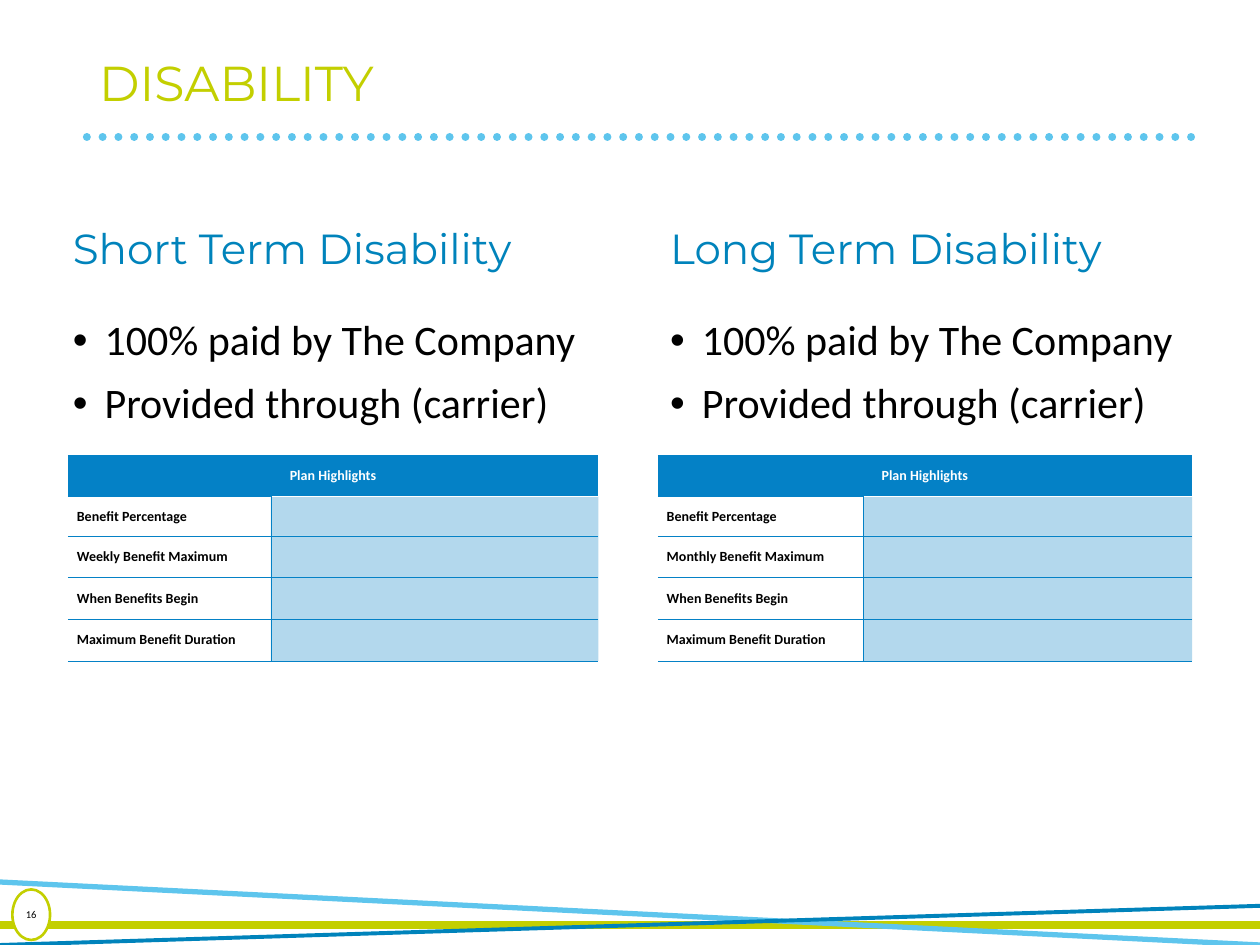
from lxml import etree
from pptx import Presentation
from pptx.dml.color import RGBColor
from pptx.enum.dml import MSO_LINE
from pptx.enum.shapes import MSO_CONNECTOR, MSO_SHAPE
from pptx.enum.text import MSO_ANCHOR, PP_ALIGN
from pptx.oxml.ns import qn
from pptx.util import Cm, Pt

STRAIGHT = MSO_CONNECTOR.STRAIGHT
OVAL = MSO_SHAPE.OVAL
ROUND_DOT = MSO_LINE.ROUND_DOT
TOP, MIDDLE = MSO_ANCHOR.TOP, MSO_ANCHOR.MIDDLE
LEFT, CENTER = PP_ALIGN.LEFT, PP_ALIGN.CENTER

WHITE = RGBColor(0xFF, 0xFF, 0xFF)
BLACK = RGBColor(0, 0, 0)
LIME = RGBColor(0xC3, 0xCF, 0x00)
SKY = RGBColor(0x5E, 0xC5, 0xED)
BLUE = RGBColor(0x00, 0x83, 0xBB)
TABLE_BLUE = RGBColor(0x04, 0x81, 0xC6)

HEADING_FONT, BODY_FONT = "Montserrat", "Calibri"
ROW_HEIGHTS = (0.84, 0.79, 0.84, 0.84, 0.84)
PLANS = (
    dict(term="Short Term", period="Weekly", left=1.22, table_left=1.37, columns=(4.09, 6.6)),
    dict(term="Long Term", period="Monthly", left=13.26, table_left=13.26, columns=(4.14, 6.63)),
)


def write(frame, text, size, font=BODY_FONT, color=BLACK, bold=False,
          align=LEFT, anchor=TOP, spacing=None, before=0, bullet=False):
    frame.word_wrap = True
    frame.vertical_anchor = anchor
    for index, line in enumerate(text.split("\n")):
        paragraph = frame.add_paragraph() if index else frame.paragraphs[0]
        paragraph.alignment = align
        if spacing:
            paragraph.line_spacing = spacing
        if index:
            paragraph.space_before = Pt(before)
        if bullet:
            properties = paragraph._p.get_or_add_pPr()
            properties.set("marL", str(Cm(0.64)))
            properties.set("indent", str(-Cm(0.64)))
            etree.SubElement(properties, qn("a:buFont"), typeface="Arial")
            etree.SubElement(properties, qn("a:buChar"), char="•")
        if not line:
            etree.SubElement(paragraph._p, qn("a:endParaRPr"), sz=str(size * 100))
            continue
        run = paragraph.add_run()
        run.text = line
        run.font.size = Pt(size)
        run.font.name = font
        run.font.bold = bold
        run.font.color.rgb = color


class SlideBuilder:
    border_width = Pt(0.25)

    def __init__(self, slide):
        self.shapes = slide.shapes

    def line(self, start, end, color, width, dash=None):
        connector = self.shapes.add_connector(STRAIGHT, *map(Cm, start + end))
        connector.line.color.rgb = color
        connector.line.width = Pt(width)
        if dash:
            connector.line.dash_style = dash
            connector.line._ln.set("cap", "rnd")
        etree.SubElement(connector._element.spPr, qn("a:effectLst"))

    def text(self, box, text, size, **style):
        frame = self.shapes.add_textbox(*map(Cm, box)).text_frame
        write(frame, text, size, spacing=0.9, **style)

    def badge(self, box, text):
        oval = self.shapes.add_shape(OVAL, *map(Cm, box))
        oval.shadow.inherit = False
        oval.fill.solid()
        oval.fill.fore_color.rgb = WHITE
        oval.line.color.rgb = LIME
        oval.line.width = Pt(1.5)
        frame = oval.text_frame
        frame.margin_left = frame.margin_right = frame.margin_top = frame.margin_bottom = 0
        write(frame, text, 6, align=CENTER, anchor=MIDDLE)

    def cell(self, cell, text, fill, borders, alpha=None, margin=0.08, **style):
        cell.margin_left = cell.margin_right = Cm(0.18)
        cell.margin_top = cell.margin_bottom = Cm(margin)
        cell.vertical_anchor = MIDDLE
        write(cell.text_frame, text, 8, bold=True, anchor=MIDDLE, **style)
        cell.fill.solid()
        cell.fill.fore_color.rgb = fill
        properties = cell._tc.get_or_add_tcPr()
        if alpha:
            shade = properties.find(".//" + qn("a:srgbClr"))
            etree.SubElement(shade, qn("a:alpha"), val=str(alpha * 1000))
        for index, side in enumerate("LRTB"):
            border = etree.Element(qn("a:ln" + side), w=str(self.border_width))
            if side in borders:
                paint = etree.SubElement(border, qn("a:solidFill"))
                etree.SubElement(paint, qn("a:srgbClr"), val=str(borders[side]))
            else:
                etree.SubElement(border, qn("a:noFill"))
            properties.insert(index, border)

    def highlights(self, left, top, columns, labels):
        table = self.shapes.add_table(len(ROW_HEIGHTS), 2, Cm(left), Cm(top),
                                      Cm(sum(columns)), Cm(sum(ROW_HEIGHTS))).table
        table.first_row = table.horz_banding = False
        for column, width in zip(table.columns, columns):
            column.width = Cm(width)
        for row, height in zip(table.rows, ROW_HEIGHTS):
            row.height = Cm(height)
        header = table.cell(0, 0)
        header.merge(table.cell(0, 1))
        self.cell(header, "Plan Highlights", TABLE_BLUE,
                  dict.fromkeys("TB", TABLE_BLUE), margin=0.1, color=WHITE, align=CENTER)
        for row, label in enumerate(labels, 1):
            edges = dict(T=TABLE_BLUE, B=TABLE_BLUE)
            self.cell(table.cell(row, 0), label, WHITE, dict(edges, R=TABLE_BLUE))
            if row == 1:
                edges["T"] = WHITE
            self.cell(table.cell(row, 1), "", TABLE_BLUE,
                      dict(edges, L=TABLE_BLUE), alpha=30)


def main():
    presentation = Presentation()
    presentation.slide_width, presentation.slide_height = Cm(25.4), Cm(19.05)
    builder = SlideBuilder(presentation.slides.add_slide(presentation.slide_layouts[6]))

    builder.line((1.75, 2.76), (24.1, 2.76), SKY, 4.5, ROUND_DOT)
    builder.line((0, 18.64), (25.4, 18.64), LIME, 4.5)
    builder.line((25.4, 19.05), (0, 17.78), SKY, 3)
    builder.line((0, 19.05), (25.4, 18.26), BLUE, 2.25)
    builder.text((1.75, 1.02, 21.89, 1.4), "DISABILITY", 28,
                 font=HEADING_FONT, color=LIME, anchor=MIDDLE)

    for plan in PLANS:
        builder.text((plan["left"], 4.47, 10.87, 1.85), plan["term"] + " Disability", 24,
                     font=HEADING_FONT, color=BLUE)
        builder.text((plan["left"], 6.32, 10.87, 2.84),
                     "100% paid by The Company\nProvided through (carrier)", 24,
                     before=10, bullet=True)
        labels = ("Benefit Percentage", plan["period"] + " Benefit Maximum",
                  "When Benefits Begin", "Maximum Benefit Duration")
        builder.highlights(plan["table_left"], 9.17, plan["columns"], labels)

    builder.badge((0.25, 17.93, 0.76, 1.02), "16")
    presentation.save("out.pptx")


if __name__ == "__main__":
    main()
